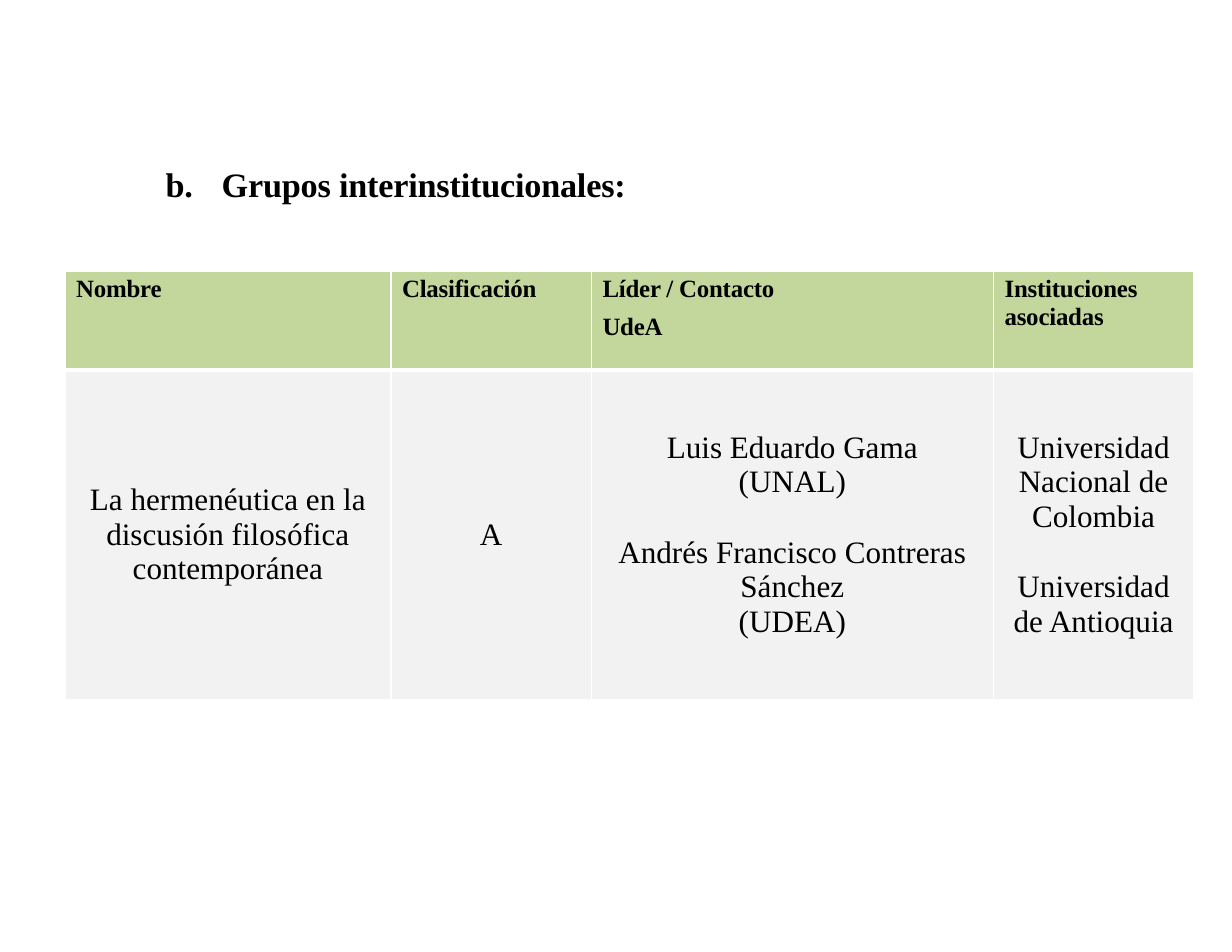
"""Builds the slide that lists the inter-institutional research groups."""
from lxml import etree
from pptx import Presentation
from pptx import util as u
from pptx.dml.color import RGBColor
from pptx.enum import text
from pptx.oxml import ns

BLACK = RGBColor(0x00, 0x00, 0x00)
WHITE = RGBColor(0xFF, 0xFF, 0xFF)
GREEN = RGBColor(0xC3, 0xD6, 0x9B)
GREY = RGBColor(0xF2, 0xF2, 0xF2)

COLUMN_WIDTHS = (2.91, 1.79, 3.59, 1.79)
HEADINGS = (
    [("Nombre", 0)],
    [("Clasificación", 0)],
    [("Líder / Contacto", 0), ("UdeA", 6.3)],
    [("Instituciones asociadas", 0)],
)
GROUP = (
    [("La hermenéutica en la discusión filosófica contemporánea", 0)],
    [("A", 0)],
    [("Luis Eduardo Gama", 0), ("(UNAL)", 0),
     ("Andrés Francisco Contreras Sánchez", 23), ("(UDEA)", 0)],
    [("Universidad Nacional de Colombia", 0), ("Universidad de Antioquia", 23)],
)


class GroupSlide:
    def __init__(self, deck, font_name):
        self.slide = deck.slides.add_slide(deck.slide_layouts[6])
        self.font_name = font_name

    def add_run(self, paragraph, words, size, bold):
        run = paragraph.add_run()
        run.text = words
        run.font.name = self.font_name
        run.font.size = u.Pt(size)
        run.font.bold = bold
        run.font.color.rgb = BLACK
        if bold:
            run._r.get_or_add_rPr().set("spc", "-10")

    def add_title(self, words, left, top, width, height):
        title = self.slide.shapes.add_textbox(
            u.Inches(left), u.Inches(top), u.Inches(width), u.Inches(height))
        frame = title.text_frame
        frame.word_wrap = True
        frame.margin_left = frame.margin_right = frame.margin_bottom = 0
        frame.margin_top = u.Inches(0.02)
        paragraph = frame.paragraphs[0]
        properties = paragraph._p.get_or_add_pPr()
        tabs = etree.SubElement(properties, ns.qn("a:tabLst"))
        etree.SubElement(tabs, ns.qn("a:tab"), pos=str(u.Inches(0.5)), algn="l")
        self.add_run(paragraph, words, 22, True)

    def add_borders(self, cell, widths):
        properties = cell._tc.get_or_add_tcPr()
        for position, (side, width) in enumerate(widths.items()):
            line = etree.Element(ns.qn(f"a:ln{side}"), w=str(u.Pt(width)))
            fill = etree.SubElement(line, ns.qn("a:solidFill"))
            etree.SubElement(fill, ns.qn("a:srgbClr"), val=str(WHITE))
            properties.insert(position, line)

    def fill_cell(self, cell, lines, heading):
        cell.fill.solid()
        cell.fill.fore_color.rgb = GREEN if heading else GREY
        if heading:
            cell.margin_left = u.Inches(0.1)
            cell.margin_top = u.Inches(0.04)
            cell.margin_right = cell.margin_bottom = 0
        else:
            cell.vertical_anchor = text.MSO_ANCHOR.MIDDLE
        frame = cell.text_frame
        for index, (words, space_before) in enumerate(lines):
            paragraph = frame.add_paragraph() if index else frame.paragraphs[0]
            paragraph.alignment = text.PP_ALIGN.LEFT if heading else text.PP_ALIGN.CENTER
            if space_before:
                paragraph.space_before = u.Pt(space_before)
            self.add_run(paragraph, words, 16 if heading else 20, heading)
        top, bottom = (1, 3) if heading else (3, 1)
        self.add_borders(cell, {"L": 1, "R": 1, "T": top, "B": bottom})

    def add_table(self, rows, left, top, column_widths, row_heights):
        table = self.slide.shapes.add_table(
            len(rows), len(column_widths), u.Inches(left), u.Inches(top),
            u.Inches(sum(column_widths)), u.Inches(sum(row_heights))).table
        for column, width in zip(table.columns, column_widths):
            column.width = u.Inches(width)
        for index, (row, height) in enumerate(zip(table.rows, row_heights)):
            row.height = u.Inches(height)
            for cell, lines in zip(row.cells, rows[index]):
                self.fill_cell(cell, lines, index == 0)


def main():
    deck = Presentation()
    deck.slide_width, deck.slide_height = u.Inches(11), u.Inches(8.5)
    groups = GroupSlide(deck, "Times New Roman")
    groups.add_title("b.\tGrupos interinstitucionales:", 1.48, 1.44, 4.17, 0.39)
    groups.add_table((HEADINGS, GROUP), 0.58, 2.42, COLUMN_WIDTHS, (0.88, 2.95))
    deck.save("out.pptx")


if __name__ == "__main__":
    main()
